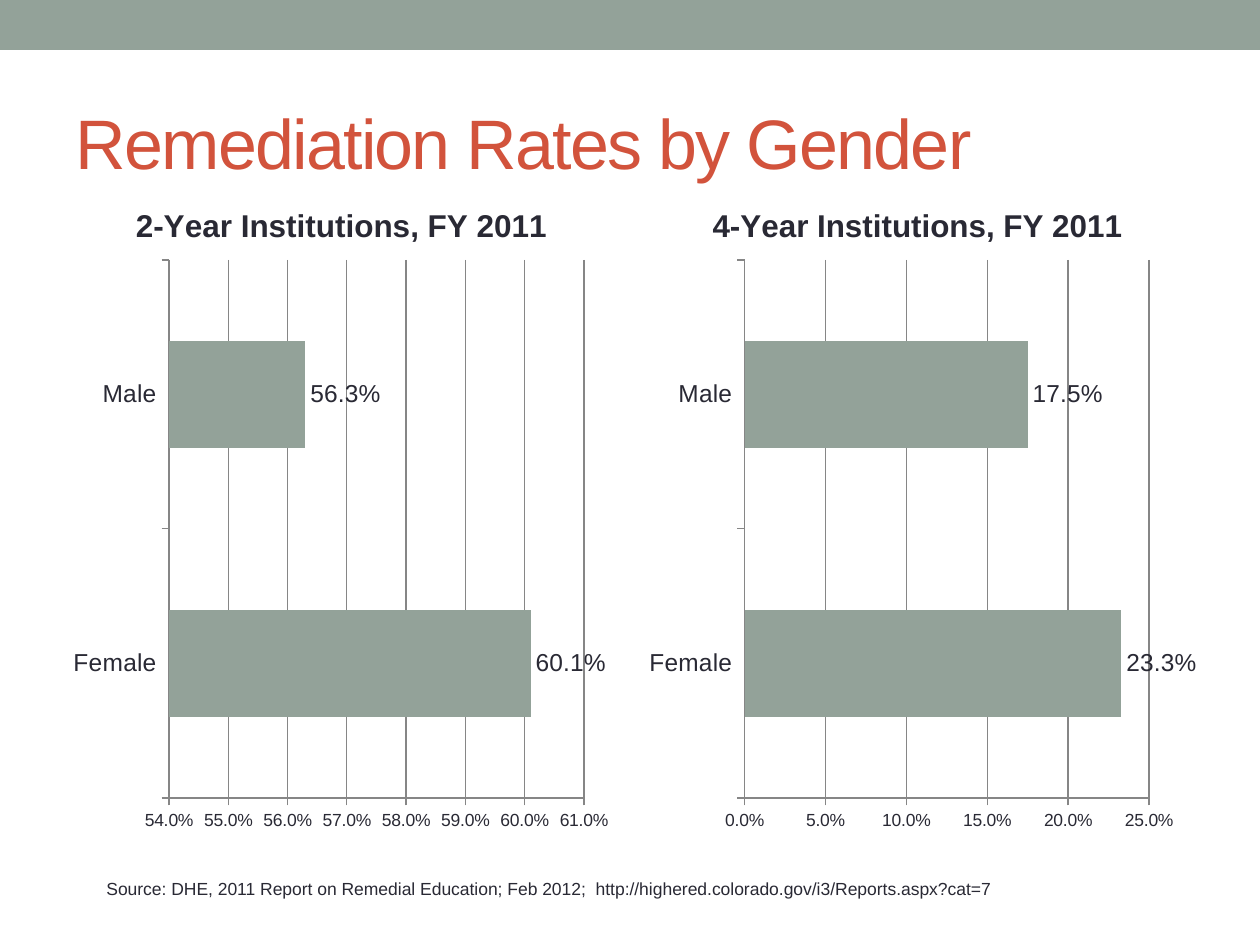
from lxml.etree import SubElement
from pptx import Presentation
from pptx.chart.data import CategoryChartData
from pptx.dml.color import RGBColor
from pptx.enum.chart import XL_CHART_TYPE, XL_LABEL_POSITION, XL_TICK_MARK
from pptx.enum.shapes import MSO_SHAPE
from pptx.enum.text import MSO_ANCHOR, MSO_AUTO_SIZE, PP_ALIGN
from pptx.oxml.ns import qn
from pptx.util import Emu, Pt

SCALE = 914400 / 126
SAGE, RUST, INK, GRAY = "93A299", "D2533C", "292934", "868686"


def px(n):
    return Emu(round(n * SCALE))


def rgb(code):
    return RGBColor.from_string(code)


class Deck:
    face = "Arial"

    def __init__(self):
        self.prs = Presentation()
        self.prs.slide_width, self.prs.slide_height = px(1260), px(945)
        self.slide = self.prs.slides.add_slide(self.prs.slide_layouts[5])

    def style(self, font, size, color=INK, bold=False):
        font.name, font.size, font.bold = self.face, Pt(size), bold
        font.color.rgb = rgb(color)

    def add_text(self, frame, text, size, color=INK):
        para = frame.paragraphs[0]
        para.alignment = PP_ALIGN.LEFT
        run = para.add_run()
        run.text = text
        self.style(run.font, size, color)
        return run

    def band(self, x, y, w, h, color):
        shape = self.slide.shapes.add_shape(
            MSO_SHAPE.RECTANGLE, px(x), px(y), px(w), px(h))
        shape.shadow.inherit = False
        shape.fill.solid()
        shape.fill.fore_color.rgb = rgb(color)
        shape.line.fill.background()

    def title(self, text, x, y, w, h):
        shape = self.slide.shapes.title
        shape.left, shape.top, shape.width, shape.height = map(px, (x, y, w, h))
        frame = shape.text_frame
        frame.vertical_anchor = MSO_ANCHOR.MIDDLE
        run = self.add_text(frame, text, 40, RUST)
        run.font._element.set("spc", "-100")

    def note(self, text, x, y, w, h):
        box = self.slide.shapes.add_textbox(px(x), px(y), px(w), px(h))
        frame = box.text_frame
        frame.word_wrap = True
        frame.auto_size = MSO_AUTO_SIZE.SHAPE_TO_FIT_TEXT
        self.add_text(frame, text, 10)

    def chart(self, title, rates, scale, box, plot):
        """Draw a bar chart; scale is (low, high, step), box and plot are x, y, w, h."""
        data = CategoryChartData(number_format="0.0%")
        data.categories = list(rates)
        data.add_series("Series 1", list(rates.values()))
        chart = self.slide.shapes.add_chart(
            XL_CHART_TYPE.BAR_CLUSTERED, *map(px, box), data).chart
        self.style(chart.font, 10)
        chart.has_legend = False
        chart.has_title = True
        run = chart.chart_title.text_frame.paragraphs[0].add_run()
        run.text = title
        self.style(run.font, 18, bold=True)
        self.axes(chart, scale)
        self.bars(chart.plots[0])
        self.place(chart, box, plot)

    def axes(self, chart, scale):
        cat, val = chart.category_axis, chart.value_axis
        val.minimum_scale, val.maximum_scale, val.major_unit = scale
        val.has_major_gridlines = True
        val.tick_labels.number_format = "0.0%"
        val.tick_labels.number_format_is_linked = False
        for axis, size in ((cat, 14), (val, 10)):
            axis.major_tick_mark = XL_TICK_MARK.OUTSIDE
            axis.minor_tick_mark = XL_TICK_MARK.NONE
            self.style(axis.tick_labels.font, size)
        for item in (cat, val, val.major_gridlines):
            item.format.line.color.rgb = rgb(GRAY)
            item.format.line.width = Pt(0.75)

    def bars(self, plot):
        plot.gap_width = 150
        plot.vary_by_categories = False
        fill = plot.series[0].format.fill
        fill.solid()
        fill.fore_color.rgb = rgb(SAGE)
        plot.has_data_labels = True
        labels = plot.data_labels
        labels.show_value = True
        labels.number_format = "0.0%"
        labels.number_format_is_linked = False
        labels.position = XL_LABEL_POSITION.OUTSIDE_END
        self.style(labels.font, 14)

    def place(self, chart, box, plot):
        """Fix the inner plot area inside the chart box."""
        area = chart._chartSpace.chart.plotArea
        for old in area.findall(qn("c:layout")):
            area.remove(old)
        layout = SubElement(area, qn("c:layout"))
        area.insert(0, layout)
        manual = SubElement(layout, qn("c:manualLayout"))
        x, y, w, h = box
        left, top, wide, high = plot
        parts = {"layoutTarget": "inner", "xMode": "edge", "yMode": "edge",
                 "x": (left - x) / w, "y": (top - y) / h,
                 "w": wide / w, "h": high / h}
        for name, value in parts.items():
            SubElement(manual, qn(f"c:{name}")).set("val", str(value))


def main():
    deck = Deck()
    deck.band(0, 0, 1260, 50, SAGE)
    deck.title("Remediation Rates by Gender", 63, 73, 1134, 136)
    deck.chart("2-Year Institutions, FY 2011", {"Female": 0.601, "Male": 0.563},
               (0.54, 0.61, 0.01), (63, 179, 557, 665), (169, 260, 415, 538))
    deck.chart("4-Year Institutions, FY 2011", {"Female": 0.233, "Male": 0.175},
               (0, 0.25, 0.05), (640, 179, 557, 665), (745, 260, 406, 538))
    deck.note("Source: DHE, 2011 Report on Remedial Education; Feb 2012;  "
              "http://highered.colorado.gov/i3/Reports.aspx?cat=7",
              94, 872, 1090, 34)
    deck.prs.save("out.pptx")


if __name__ == "__main__":
    main()
